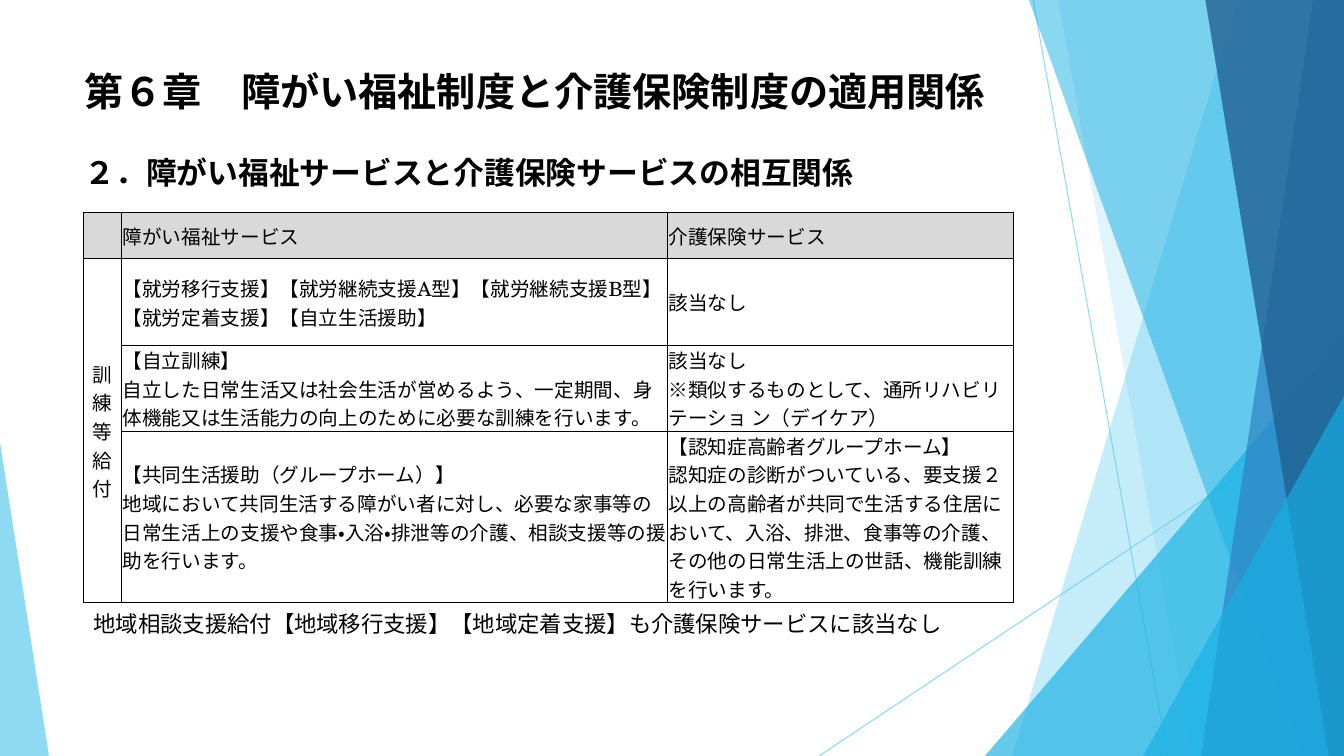
from lxml.etree import SubElement
from pptx import Presentation
from pptx.dml.color import RGBColor
from pptx.enum.lang import MSO_LANGUAGE_ID
from pptx.enum.shapes import MSO_CONNECTOR, MSO_SHAPE
from pptx.enum.text import MSO_ANCHOR, PP_ALIGN
from pptx.oxml.ns import qn
from pptx.util import Pt

WIDTH, HEIGHT = 960, 540
SANS, SERIF = "Lato", "TeX Gyre Schola"
COLOURS = {
    "black": "000000", "header": "D9D9D9", "sky": "5FCBEF",
    "cyan": "17B0E4", "blue": "2E83C3", "navy": "226292",
}


class SlideBuilder:
    def __init__(self, page):
        self.page = page

    def paint(self, fill, colour, opacity=100):
        fill.solid()
        fill.fore_color.rgb = RGBColor.from_string(COLOURS[colour])
        if opacity < 100:
            for tint in fill._xPr.iter(qn("a:srgbClr")):
                SubElement(tint, qn("a:alpha"), val=str(opacity * 1000))

    def finish(self, shape, colour, opacity):
        shape.shadow.inherit = False
        shape.line.fill.background()
        self.paint(shape.fill, colour, opacity)

    def line(self, start, end):
        line = self.page.shapes.add_connector(
            MSO_CONNECTOR.STRAIGHT, *(Pt(value) for value in start + end))
        line.line.width = Pt(0.75)
        self.paint(line.line.fill, "sky", 70)
        SubElement(line._element.spPr, qn("a:effectLst"))

    def band(self, top_x, bottom_x, colour, opacity):
        """Area from a slanted left side to the right edge of the page."""
        builder = self.page.shapes.build_freeform(Pt(top_x), 0)
        corners = [(WIDTH, 0), (WIDTH, HEIGHT), (bottom_x, HEIGHT)]
        builder.add_line_segments([(Pt(x), Pt(y)) for x, y in corners])
        self.finish(builder.convert_to_shape(), colour, opacity)

    def triangle(self, left, top, right, apex, colour, opacity):
        """Triangle standing on the bottom edge of the page."""
        shape = self.page.shapes.add_shape(
            MSO_SHAPE.ISOSCELES_TRIANGLE,
            Pt(left), Pt(top), Pt(right - left), Pt(HEIGHT - top))
        shape.adjustments[0] = apex
        self.finish(shape, colour, opacity)

    def span(self, para, text, size, font, bold=False):
        span = para.add_run()
        span.text = text
        span.font.size = Pt(size)
        span.font.name = font
        span.font.bold = bold
        span.font.language_id = MSO_LANGUAGE_ID.JAPANESE
        span.font.color.rgb = RGBColor.from_string(COLOURS["black"])

    def title(self, left, top, width, height, lines):
        box = self.page.shapes.title
        box.left, box.top, box.width, box.height = map(Pt, (left, top, width, height))
        frame = box.text_frame
        frame.word_wrap = True
        frame.vertical_anchor = MSO_ANCHOR.TOP
        frame.margin_top = 0
        for index, (text, size, font, gap) in enumerate(lines):
            para = frame.add_paragraph() if index else frame.paragraphs[0]
            para.alignment = PP_ALIGN.LEFT
            para.space_before = Pt(gap)
            self.span(para, text, size, font, bold=True)

    def text(self, left, top, width, height, text):
        box = self.page.shapes.add_textbox(Pt(left), Pt(top), Pt(width), Pt(height))
        box.text_frame.word_wrap = True
        self.span(box.text_frame.paragraphs[0], text, 16, SANS)

    def cell(self, cell, paragraphs, align, header):
        cell.vertical_anchor = MSO_ANCHOR.MIDDLE
        cell.margin_left = cell.margin_right = Pt(0.7)
        cell.margin_top = cell.margin_bottom = 0
        properties = cell._tc.get_or_add_tcPr()
        for side in ("lnL", "lnR", "lnT", "lnB"):
            border = SubElement(properties, qn(f"a:{side}"), w=str(Pt(1)))
            solid = SubElement(border, qn("a:solidFill"))
            SubElement(solid, qn("a:srgbClr"), val=COLOURS["black"])
        if header:
            self.paint(cell.fill, "header")
        else:
            cell.fill.background()
        for index, lines in enumerate(paragraphs):
            frame = cell.text_frame
            para = frame.add_paragraph() if index else frame.paragraphs[0]
            para.alignment = align
            for number, line in enumerate(lines.split("\n")):
                if number:
                    para.add_line_break()
                self.span(para, line, 14, SERIF)

    def table(self, left, top, widths, heights, rows):
        table = self.page.shapes.add_table(
            len(heights), len(widths), Pt(left), Pt(top),
            Pt(sum(widths)), Pt(sum(heights))).table
        table.first_row = table.horz_banding = False
        for column, width in zip(table.columns, widths):
            column.width = Pt(width)
        for row, height in zip(table.rows, heights):
            row.height = Pt(height)
        for r, row in enumerate(rows):
            for c, (paragraphs, align) in enumerate(row):
                self.cell(table.cell(r, c), paragraphs, align, header=r == 0)
        group = table.cell(1, 0)
        group.merge(table.cell(len(rows) - 1, 0))
        group._tc.tcPr.set("vert", "eaVert")


LEFT, CENTER, JUSTIFY = PP_ALIGN.LEFT, PP_ALIGN.CENTER, PP_ALIGN.JUSTIFY
EMPTY = ([], LEFT)
SERVICES = [
    [EMPTY, (["障がい福祉サービス"], JUSTIFY), (["介護保険サービス"], JUSTIFY)],
    [(["訓練等給付"], CENTER),
     (["【就労移行支援】【就労継続支援A型】【就労継続支援B型】",
       "【就労定着支援】【自立生活援助】"], LEFT),
     (["該当なし"], JUSTIFY)],
    [EMPTY,
     (["【自立訓練】\n自立した日常生活又は社会生活が営めるよう、一定期間、"
       "身体機能又は生活能力の向上のために必要な訓練を行います。"], LEFT),
     (["該当なし\n※類似するものとして、通所リハビリテーショ ン（デイケア）"], LEFT)],
    [EMPTY,
     (["【共同生活援助（グループホーム）】\n地域において共同生活する障がい者に対し、"
       "必要な家事等の日常生活上の支援や食事・入浴・排泄等の介護、"
       "相談支援等の援助を行います。"], LEFT),
     (["【認知症高齢者グループホーム】\n認知症の診断がついている、"
       "要支援２以上の高齢者が共同で生活する住居において、入浴、排泄、"
       "食事等の介護、その他の日常生活上の世話、機能訓練を行います。"], LEFT)],
]


def main():
    deck = Presentation()
    deck.slide_width, deck.slide_height = Pt(WIDTH), Pt(HEIGHT)
    slide = SlideBuilder(deck.slides.add_slide(deck.slide_layouts[5]))

    # Background facets
    slide.line((738, 0), (834, HEIGHT))
    slide.line((WIDTH, 290), (585, HEIGHT))
    slide.band(884, 723, "sky", 36)
    slide.band(756, 852, "sky", 20)
    slide.triangle(703.5, 240, WIDTH, 1, "cyan", 66)
    slide.band(735, 929.5, "cyan", 50)
    slide.band(938, 858, "blue", 70)
    slide.band(861, 949, "navy", 80)
    slide.triangle(816.5, 283, WIDTH, 1, "cyan", 66)
    slide.triangle(0, 316, 35, 0, "sky", 70)

    # Chapter and section headings
    slide.title(53.3, 48.2, 677, 103.7, [
        ("第６章　障がい福祉制度と介護保険制度の適用関係", 28, SANS, 0),
        ("２．障がい福祉サービスと介護保険サービスの相互関係", 22, SERIF, 28),
    ])

    # Service comparison and the remark below it
    slide.table(59.7, 151.9, [27.2, 390, 247], [33, 62, 61, 121], SERVICES)
    slide.text(59.7, 432, 654.5, 26.6,
               "地域相談支援給付【地域移行支援】【地域定着支援】も介護保険サービスに該当なし")

    deck.save("out.pptx")


if __name__ == "__main__":
    main()
